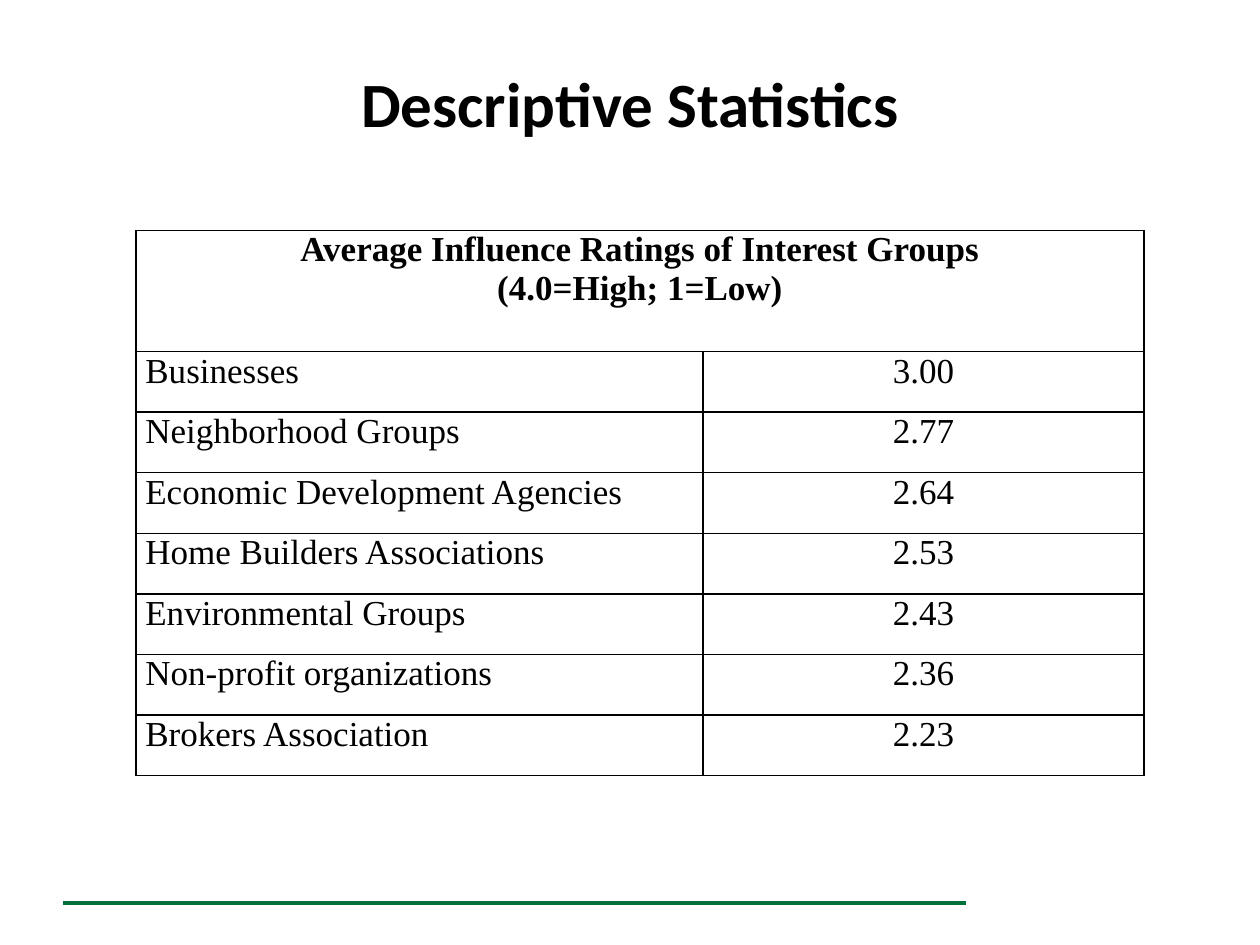
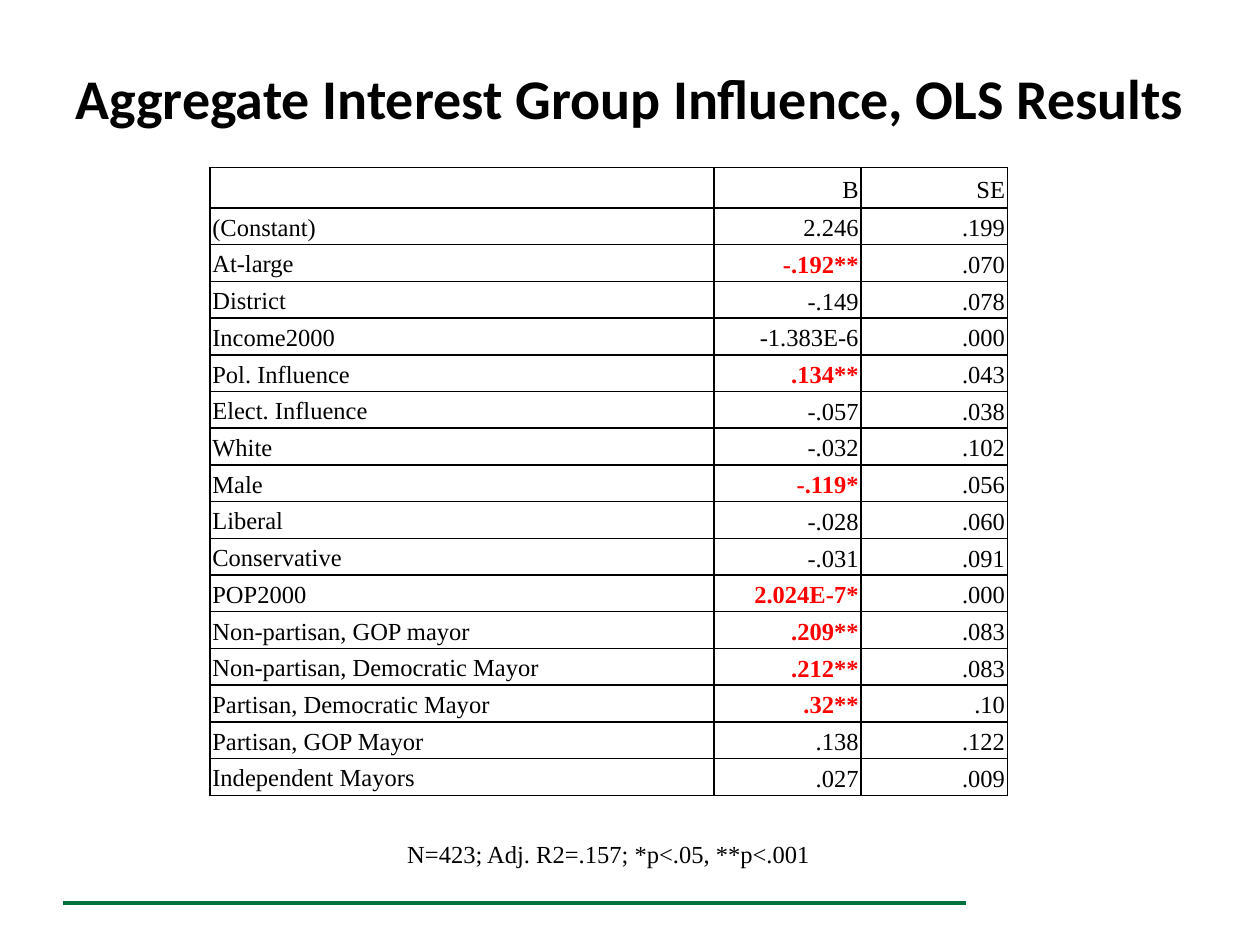
from lxml.etree import SubElement
from pptx import Presentation
from pptx.dml.color import RGBColor
from pptx.enum.shapes import MSO_CONNECTOR
from pptx.enum.text import MSO_ANCHOR as Anchor, MSO_AUTO_SIZE as AutoSize, PP_ALIGN as Align
from pptx.oxml import parse_xml
from pptx.oxml.ns import nsdecls, qn
from pptx.util import Cm, Pt

COLORS = {
    "text": "000000",
    "border": "000000",
    "cell": "FFFFFF",
    "significant": "FF0000",
    "rule": "00703C",
}
TITLE_FONT = "Calibri"
BODY_FONT = "Times New Roman"
SLIDE_WIDTH, SLIDE_HEIGHT = 25.4, 19.05
TITLE_ONLY_LAYOUT = 5

RATINGS_HEADING = "Average Influence Ratings of Interest Groups\n(4.0=High; 1=Low)"
RATINGS = [
    ("Businesses", "3.00"),
    ("Neighborhood Groups", "2.77"),
    ("Economic Development Agencies", "2.64"),
    ("Home Builders Associations", "2.53"),
    ("Environmental Groups", "2.43"),
    ("Non-profit organizations", "2.36"),
    ("Brokers Association", "2.23"),
]
OLS_RESULTS = [
    ("", "B", "SE"),
    ("(Constant)", "2.246", ".199"),
    ("At-large", "-.192**", ".070"),
    ("District", "-.149", ".078"),
    ("Income2000", "-1.383E-6", ".000"),
    ("Pol. Influence", ".134**", ".043"),
    ("Elect. Influence", "-.057", ".038"),
    ("White", "-.032", ".102"),
    ("Male", "-.119*", ".056"),
    ("Liberal", "-.028", ".060"),
    ("Conservative", "-.031", ".091"),
    ("POP2000", "2.024E-7*", ".000"),
    ("Non-partisan, GOP mayor", ".209**", ".083"),
    ("Non-partisan, Democratic Mayor", ".212**", ".083"),
    ("Partisan, Democratic Mayor", ".32**", ".10"),
    ("Partisan, GOP Mayor", ".138", ".122"),
    ("Independent Mayors", ".027", ".009"),
]


def rgb(name):
    return RGBColor.from_string(COLORS[name])


def write_text(frame, text, size=14, font=BODY_FONT, color="text", bold=False,
               align=Align.LEFT, anchor=Anchor.TOP, line_spacing=None):
    """Fill a text frame, one paragraph for each line of text."""
    frame.word_wrap = True
    frame.vertical_anchor = anchor
    for index, line in enumerate(text.split("\n")):
        paragraph = frame.add_paragraph() if index else frame.paragraphs[0]
        paragraph.alignment = align
        paragraph.line_spacing = line_spacing
        run = paragraph.add_run()
        run.text = line
        run.font.size = Pt(size)
        run.font.name = font
        run.font.bold = bold
        run.font.color.rgb = rgb(color)


def add_footer_rule(slide):
    rule = slide.shapes.add_connector(
        MSO_CONNECTOR.STRAIGHT, Cm(1.27), Cm(18.2), Cm(19.48), Cm(18.2))
    rule.line.color.rgb = rgb("rule")
    rule.line.width = Pt(2.5)
    SubElement(rule.element.spPr, qn("a:effectLst"))


def add_titled_slide(presentation, text, size, height):
    slide = presentation.slides.add_slide(presentation.slide_layouts[TITLE_ONLY_LAYOUT])
    title = slide.shapes.title
    title.left, title.top = Cm(0), Cm(0.76)
    title.width, title.height = Cm(SLIDE_WIDTH), Cm(height)
    title.text_frame.auto_size = AutoSize.NONE
    write_text(title.text_frame, text, size=size, font=TITLE_FONT, bold=True,
               align=Align.CENTER, anchor=Anchor.MIDDLE)
    add_footer_rule(slide)
    return slide


def add_plain_table(slide, left, top, column_widths, row_heights):
    """Add a table without banding whose cells have thin borders."""
    frame = slide.shapes.add_table(
        len(row_heights), len(column_widths), Cm(left), Cm(top),
        Cm(sum(column_widths)), Cm(sum(row_heights)))
    table = frame.table
    table.first_row = table.horz_banding = False
    for column, width in zip(table.columns, column_widths):
        column.width = Cm(width)
    for row, height in zip(table.rows, row_heights):
        row.height = Cm(height)
    for cell in table.iter_cells():
        add_borders(cell)
        cell.fill.solid()
        cell.fill.fore_color.rgb = rgb("cell")
    return table


def add_borders(cell):
    properties = cell._tc.get_or_add_tcPr()
    for side in ("lnL", "lnR", "lnT", "lnB"):
        properties.append(parse_xml(
            f'<a:{side} {nsdecls("a")} w="{Pt(1)}"><a:solidFill>'
            f'<a:srgbClr val="{COLORS["border"]}"/></a:solidFill></a:{side}>'))


def write_cell(cell, text, margin_x, margin_y, anchor=Anchor.TOP, **text_format):
    cell.margin_left = cell.margin_right = Cm(margin_x)
    cell.margin_top = cell.margin_bottom = Cm(margin_y)
    write_text(cell.text_frame, text, **text_format)
    cell.vertical_anchor = anchor


def add_ratings_table(slide):
    row_height = 1.22
    heights = [2 * row_height] + [row_height] * len(RATINGS)
    table = add_plain_table(slide, 2.74, 4.65, [11.43, 8.89], heights)
    cell_format = {"margin_x": 0.19, "margin_y": 0, "size": 20}
    heading = table.cell(0, 0)
    heading.merge(table.cell(0, 1))
    write_cell(heading, RATINGS_HEADING, bold=True, align=Align.CENTER, **cell_format)
    for row, (group, rating) in enumerate(RATINGS, start=1):
        write_cell(table.cell(row, 0), group, align=Align.JUSTIFY, **cell_format)
        write_cell(table.cell(row, 1), rating, align=Align.CENTER, **cell_format)


def add_ols_table(slide):
    table = add_plain_table(slide, 4.23, 3.38, [10.16, 2.97, 2.95],
                            [0.74] * len(OLS_RESULTS))
    cell_format = {"margin_x": 0.05, "margin_y": 0.05, "line_spacing": 1.15}
    for row, (variable, *estimates) in enumerate(OLS_RESULTS):
        write_cell(table.cell(row, 0), variable, **cell_format)
        for column, estimate in enumerate(estimates, start=1):
            significant = estimate.endswith("*")
            write_cell(table.cell(row, column), estimate, bold=significant,
                       color="significant" if significant else "text",
                       align=Align.RIGHT, anchor=Anchor.MIDDLE, **cell_format)


def add_table_note(slide, text):
    box = slide.shapes.add_textbox(Cm(4.23), Cm(16.71), Cm(16.08), Cm(0.89))
    write_text(box.text_frame, text, align=Align.CENTER, line_spacing=1.15)
    box.text_frame.auto_size = AutoSize.SHAPE_TO_FIT_TEXT


def main():
    presentation = Presentation()
    presentation.slide_width = Cm(SLIDE_WIDTH)
    presentation.slide_height = Cm(SLIDE_HEIGHT)

    ratings_slide = add_titled_slide(presentation, "Descriptive Statistics", 36, 2.62)
    add_ratings_table(ratings_slide)

    ols_slide = add_titled_slide(
        presentation, "Aggregate Interest Group Influence, OLS Results", 32, 2.41)
    add_ols_table(ols_slide)
    add_table_note(ols_slide, "N=423; Adj. R2=.157; *p<.05, **p<.001")

    presentation.save("out.pptx")


if __name__ == "__main__":
    main()
